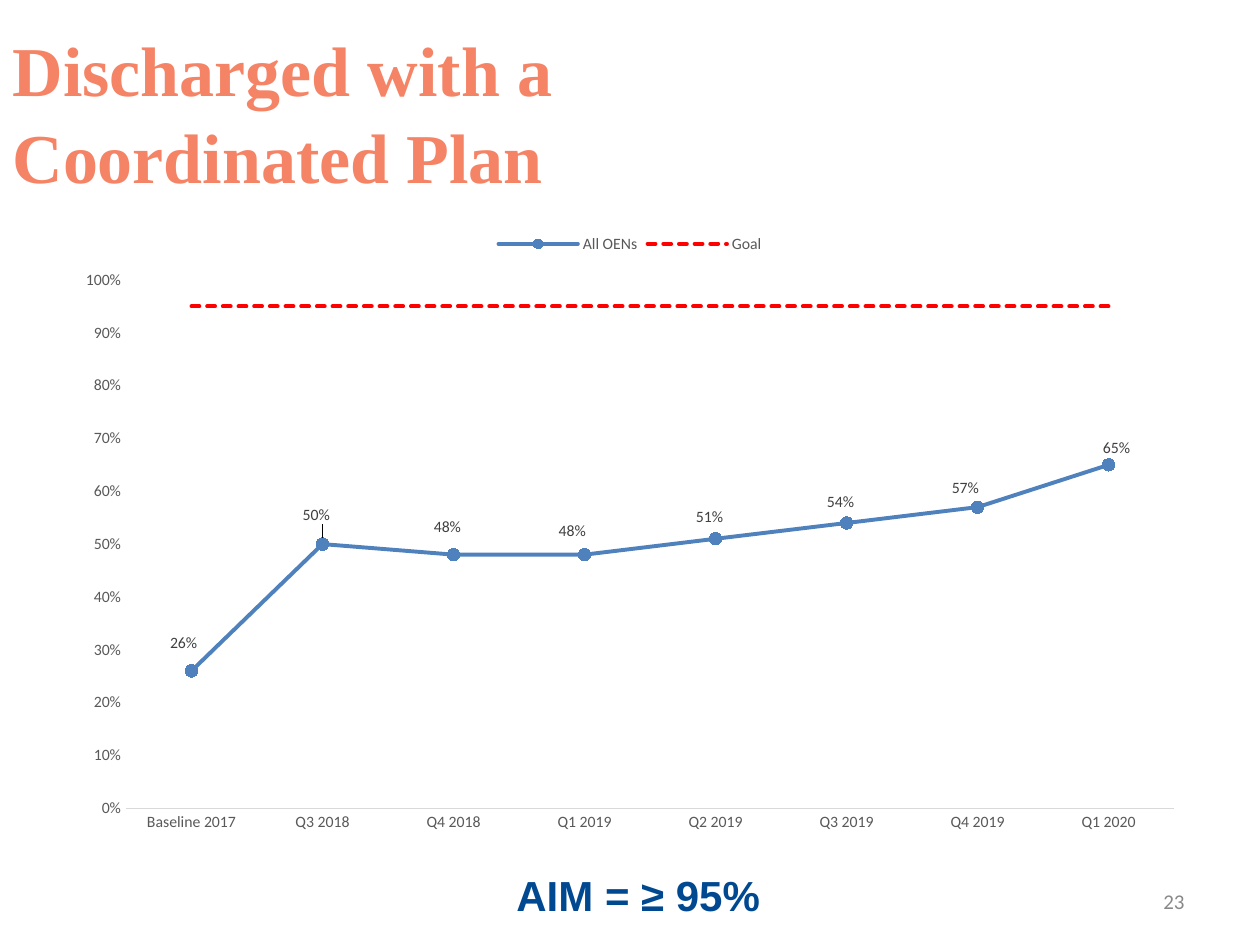
from dataclasses import dataclass

from lxml import etree
from pptx import Presentation
from pptx.chart.data import CategoryChartData
from pptx.dml.color import RGBColor
from pptx.enum.chart import (
    XL_CHART_TYPE, XL_LABEL_POSITION, XL_LEGEND_POSITION, XL_MARKER_STYLE, XL_TICK_MARK,
)
from pptx.enum.dml import MSO_LINE
from pptx.enum.text import MSO_ANCHOR, PP_ALIGN
from pptx.oxml.ns import qn
from pptx.util import Pt

LINE_MARKERS = XL_CHART_TYPE.LINE_MARKERS
LABEL_ABOVE = XL_LABEL_POSITION.ABOVE
LEGEND_TOP = XL_LEGEND_POSITION.TOP
CIRCLE, NO_MARKER = XL_MARKER_STYLE.CIRCLE, XL_MARKER_STYLE.NONE
NO_TICK = XL_TICK_MARK.NONE
SHORT_DASH = MSO_LINE.SQUARE_DOT
MIDDLE, TOP = MSO_ANCHOR.MIDDLE, MSO_ANCHOR.TOP
LEFT, RIGHT = PP_ALIGN.LEFT, PP_ALIGN.RIGHT


@dataclass(frozen=True)
class TextStyle:
    name: str
    size: float
    color: str
    bold: bool = False


@dataclass(frozen=True)
class Theme:
    title: TextStyle = TextStyle("Times New Roman", 40, "F58466", True)
    aim: TextStyle = TextStyle("Arial", 24, "004990", True)
    page_number: TextStyle = TextStyle("Calibri", 12, "898989")
    chart: TextStyle = TextStyle("Calibri", 10, "000000")
    axis: TextStyle = TextStyle("Calibri", 9, "595959")
    data_label: TextStyle = TextStyle("Calibri", 9, "404040")
    axis_line: str = "D9D9D9"
    measured: str = "4F81BD"
    goal: str = "FF0000"


@dataclass(frozen=True)
class Box:
    left: float
    top: float
    width: float
    height: float


@dataclass(frozen=True)
class Quarter:
    name: str
    value: float
    label_shift: tuple[float, float]


THEME = Theme()
GOAL_VALUE = 0.95
TITLE_BOX = Box(0, 18, 474, 90)
CHART_BOX = Box(36, 126, 648, 356.4)
PLOT_BOX = Box(36, 34, 599, 302)
AIM_BOX = Box(288, 493.2, 177.12, 36)
PAGE_NUMBER_BOX = Box(516, 500.4, 168, 28.8)
QUARTERS = (
    Quarter("Baseline 2017", 0.26, (-4.5, -4.5)),
    Quarter("Q3 2018", 0.50, (-3.5, -5)),
    Quarter("Q4 2018", 0.48, (-3.5, -4)),
    Quarter("Q1 2019", 0.48, (-7, -2)),
    Quarter("Q2 2019", 0.51, (-3.5, -1)),
    Quarter("Q3 2019", 0.54, (-3.5, 0)),
    Quarter("Q4 2019", 0.57, (-7, 1)),
    Quarter("Q1 2020", 0.65, (4.5, 2)),
)


def style_font(font, style: TextStyle) -> None:
    font.name = style.name
    font.size = Pt(style.size)
    font.bold = style.bold
    font.color.rgb = RGBColor.from_string(style.color)


def place(shape, box: Box) -> None:
    shape.left, shape.top = Pt(box.left), Pt(box.top)
    shape.width, shape.height = Pt(box.width), Pt(box.height)


def write(shape, text: str, style: TextStyle, anchor, alignment) -> None:
    frame = shape.text_frame
    frame.word_wrap = True
    frame.vertical_anchor = anchor
    frame.text = text
    paragraph = frame.paragraphs[0]
    paragraph.alignment = alignment
    style_font(paragraph.runs[0].font, style)


def add_text(slide, box: Box, text: str, style: TextStyle, anchor, alignment) -> None:
    shape = slide.shapes.add_textbox(
        Pt(box.left), Pt(box.top), Pt(box.width), Pt(box.height))
    write(shape, text, style, anchor, alignment)


def make_layout(values: dict[str, str | float]):
    layout = etree.Element(qn("c:layout"))
    manual = etree.SubElement(layout, qn("c:manualLayout"))
    for tag, value in values.items():
        etree.SubElement(manual, qn(f"c:{tag}")).set("val", str(value))
    return layout


def set_plot_area(chart, box: Box) -> None:
    plot_area = chart._chartSpace.chart.plotArea
    for old_layout in plot_area.findall(qn("c:layout")):
        plot_area.remove(old_layout)
    plot_area.insert(0, make_layout({
        "layoutTarget": "inner", "xMode": "edge", "yMode": "edge",
        "x": box.left / CHART_BOX.width, "y": box.top / CHART_BOX.height,
        "w": box.width / CHART_BOX.width, "h": box.height / CHART_BOX.height,
    }))


def style_series(series, color: str) -> None:
    series.smooth = False
    line = series.format.line
    line.width = Pt(2.25)
    line.color.rgb = RGBColor.from_string(color)
    series._element.xpath("c:spPr/a:ln")[0].set("cap", "rnd")


def label_points(series) -> None:
    labels = series.data_labels
    labels.show_value = True
    labels.number_format = "0%"
    labels.number_format_is_linked = False
    labels.position = LABEL_ABOVE
    style_font(labels.font, THEME.data_label)
    for index, quarter in enumerate(QUARTERS):
        label = series.points[index].data_label
        style_font(label.font, THEME.data_label)
        label.position = LABEL_ABOVE
        horizontal, vertical = quarter.label_shift
        element = series._element.xpath(f"c:dLbls/c:dLbl[c:idx/@val='{index}']")[0]
        element.insert(1, make_layout({
            "x": horizontal / CHART_BOX.width, "y": vertical / CHART_BOX.height,
        }))


def style_axes(chart) -> None:
    for axis in (chart.category_axis, chart.value_axis):
        axis.major_tick_mark = axis.minor_tick_mark = NO_TICK
        axis.has_major_gridlines = False
        style_font(axis.tick_labels.font, THEME.axis)
    category_line = chart.category_axis.format.line
    category_line.width = Pt(0.75)
    category_line.color.rgb = RGBColor.from_string(THEME.axis_line)
    value_axis = chart.value_axis
    value_axis.minimum_scale, value_axis.maximum_scale = 0, 1
    value_axis.major_unit = 0.1
    value_axis.tick_labels.number_format = "0%"
    value_axis.tick_labels.number_format_is_linked = False
    value_axis.format.line.fill.background()


def add_progress_chart(slide, box: Box) -> None:
    data = CategoryChartData(number_format="0%")
    data.categories = [quarter.name for quarter in QUARTERS]
    data.add_series("All OENs", [quarter.value for quarter in QUARTERS])
    data.add_series("Goal", [GOAL_VALUE] * len(QUARTERS))
    chart = slide.shapes.add_chart(
        LINE_MARKERS, Pt(box.left), Pt(box.top), Pt(box.width), Pt(box.height), data).chart
    style_font(chart.font, THEME.chart)
    chart.has_title = False
    chart.has_legend = True
    chart.legend.position = LEGEND_TOP
    chart.legend.include_in_layout = False
    style_font(chart.legend.font, THEME.axis)
    chart.plots[0].vary_by_categories = False
    set_plot_area(chart, PLOT_BOX)
    style_axes(chart)

    measured, goal = chart.plots[0].series
    style_series(measured, THEME.measured)
    measured.marker.style = CIRCLE
    measured.marker.size = 7
    for part in (measured.marker.format.fill, measured.marker.format.line.fill):
        part.solid()
        part.fore_color.rgb = RGBColor.from_string(THEME.measured)
    label_points(measured)
    style_series(goal, THEME.goal)
    goal.format.line.dash_style = SHORT_DASH
    goal.marker.style = NO_MARKER


def main() -> None:
    presentation = Presentation()
    presentation.slide_width, presentation.slide_height = Pt(720), Pt(540)
    slide = presentation.slides.add_slide(presentation.slide_layouts[5])
    title = slide.shapes.title
    place(title, TITLE_BOX)
    write(title, "Discharged with a Coordinated Plan", THEME.title, MIDDLE, LEFT)
    title.text_frame.paragraphs[0].line_spacing = 1.04
    add_progress_chart(slide, CHART_BOX)
    add_text(slide, AIM_BOX, "AIM = ≥ 95%", THEME.aim, TOP, LEFT)
    add_text(slide, PAGE_NUMBER_BOX, "23", THEME.page_number, MIDDLE, RIGHT)
    presentation.save("out.pptx")


if __name__ == "__main__":
    main()
